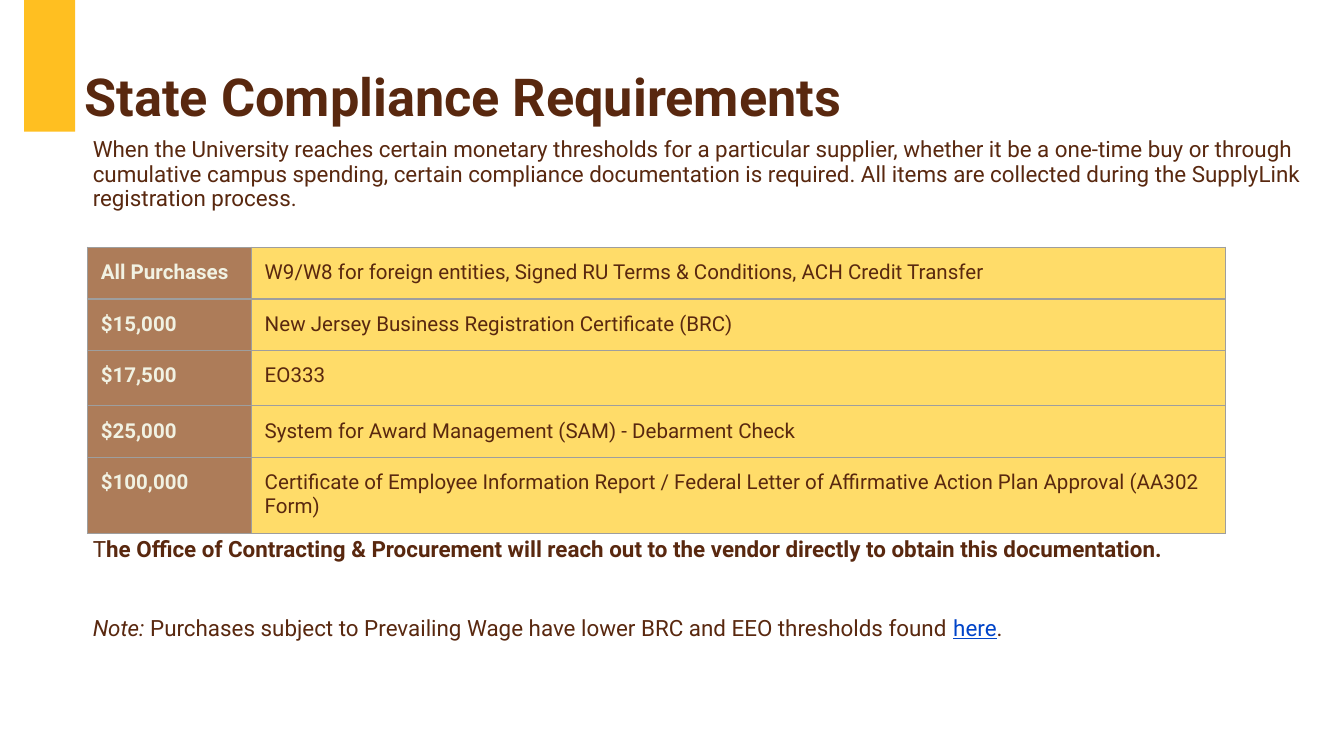
from lxml.etree import SubElement
from pptx import Presentation
from pptx.dml.color import RGBColor
from pptx.enum.shapes import MSO_SHAPE as Shape
from pptx.enum.text import MSO_ANCHOR as Anchor
from pptx.oxml.ns import qn
from pptx.util import Inches, Pt

BROWN, GOLD, TAN, YELLOW = "59280F", "FFBF21", "AD7C59", "FFDC69"
CREAM, BLUE, GREY = "F1F2E3", "0044C9", "9E9E9E"


def color(hex_code):
    return RGBColor.from_string(hex_code)


def apply(target, values):
    for name, value in values.items():
        setattr(target, name, value)


class ComplianceSlide:
    """Holds the text style and the slide that its methods add elements to."""

    def __init__(self, slide, font="Roboto", ink=BROWN):
        self.slide, self.font, self.ink = slide, font, ink

    def bar(self, box, fill):
        bar = self.slide.shapes.add_shape(Shape.RECTANGLE, *map(Inches, box))
        bar.shadow.inherit = False
        bar.fill.solid()
        bar.fill.fore_color.rgb = color(fill)
        bar.line.fill.background()

    def run(self, paragraph, text, size, ink=None, **style):
        run = paragraph.add_run()
        run.text = text
        apply(run.font, {"name": self.font, "size": Pt(size), **style})
        run.font.color.rgb = color(ink or self.ink)

    def text(self, box, paragraphs, size, inset_left, anchor=Anchor.TOP):
        frame = self.slide.shapes.add_textbox(*map(Inches, box)).text_frame
        apply(frame, {
            "word_wrap": True, "vertical_anchor": anchor,
            "margin_left": Inches(inset_left), "margin_right": Inches(0.07),
            "margin_top": Inches(0.04), "margin_bottom": Inches(0.04),
        })
        for index, (gap, runs) in enumerate(paragraphs):
            paragraph = frame.add_paragraph() if index else frame.paragraphs[0]
            apply(paragraph, {"line_spacing": 0.9, "space_before": Pt(gap)})
            for words, style in runs:
                self.run(paragraph, words, size, **style)

    def border(self, cell):
        properties = cell._tc.get_or_add_tcPr()
        for place, edge in enumerate(("a:lnL", "a:lnR", "a:lnT", "a:lnB")):
            line = SubElement(properties, qn(edge), w=str(Pt(0.75)))
            properties.insert(place, line)
            fill = SubElement(line, qn("a:solidFill"))
            SubElement(fill, qn("a:srgbClr"), val=GREY)

    def table(self, left, top, widths, heights, rows, formats, size):
        box = map(Inches, (left, top, sum(widths), sum(heights)))
        table = self.slide.shapes.add_table(len(rows), len(widths), *box).table
        apply(table, {"first_row": False, "horz_banding": False})
        for column, width in zip(table.columns, widths):
            column.width = Inches(width)
        for row, height, words in zip(table.rows, heights, rows):
            row.height = Inches(height)
            for cell, text, (fill, ink, bold) in zip(row.cells, words, formats):
                for side in ("left", "right", "top", "bottom"):
                    setattr(cell, f"margin_{side}", Inches(0.1))
                cell.fill.solid()
                cell.fill.fore_color.rgb = color(fill)
                self.border(cell)
                self.run(cell.text_frame.paragraphs[0], text, size, ink, bold=bold)


THRESHOLDS = [
    ("All Purchases", "W9/W8 for foreign entities, Signed RU Terms & Conditions, ACH Credit Transfer"),
    ("$15,000", "New Jersey Business Registration Certificate (BRC)"),
    ("$17,500", "EO333"),
    ("$25,000", "System for Award Management (SAM) - Debarment Check"),
    ("$100,000", "Certificate of Employee Information Report / Federal Letter of "
                 "Affirmative Action Plan Approval (AA302 Form)"),
]
INTRO = ("When the University reaches certain monetary thresholds for a particular supplier, "
         "whether it be a one-time buy or through cumulative campus spending, certain compliance "
         "documentation is required. All items are collected during the SupplyLink "
         "registration process.")
OUTREACH = ("he Office of Contracting & Procurement will reach out to the vendor directly "
            "to obtain this documentation.")
WAGE_NOTE = " Purchases subject to Prevailing Wage have lower BRC and EEO thresholds found "
BODY = [
    (0, [(INTRO, {})]),
    (175.5, [("T", {}), (OUTREACH, {"bold": True})]),
    (29, [("Note:", {"italic": True}), (WAGE_NOTE, {}),
          ("here", {"ink": BLUE, "underline": True}), (".", {})]),
]


def main():
    deck = Presentation()
    apply(deck, {"slide_width": Inches(10), "slide_height": Inches(10) * 9 // 16})
    page = ComplianceSlide(deck.slides.add_slide(deck.slide_layouts[6]))
    page.bar((0.18, 0, 0.38, 0.98), GOLD)
    title = [(0, [("State Compliance Requirements", {"bold": True})])]
    page.text((0.56, 0.1, 9.35, 0.89), title, 28, 0.07, Anchor.BOTTOM)
    page.text((0.65, 0.99, 9.35, 4.02), BODY, 12, 0.04)
    page.table(0.65, 1.84, (1.22, 7.25), (0.37, 0.37, 0.41, 0.37, 0.55), THRESHOLDS,
               ((TAN, CREAM, True), (YELLOW, BROWN, False)), 11)
    deck.save("out.pptx")


if __name__ == "__main__":
    main()
